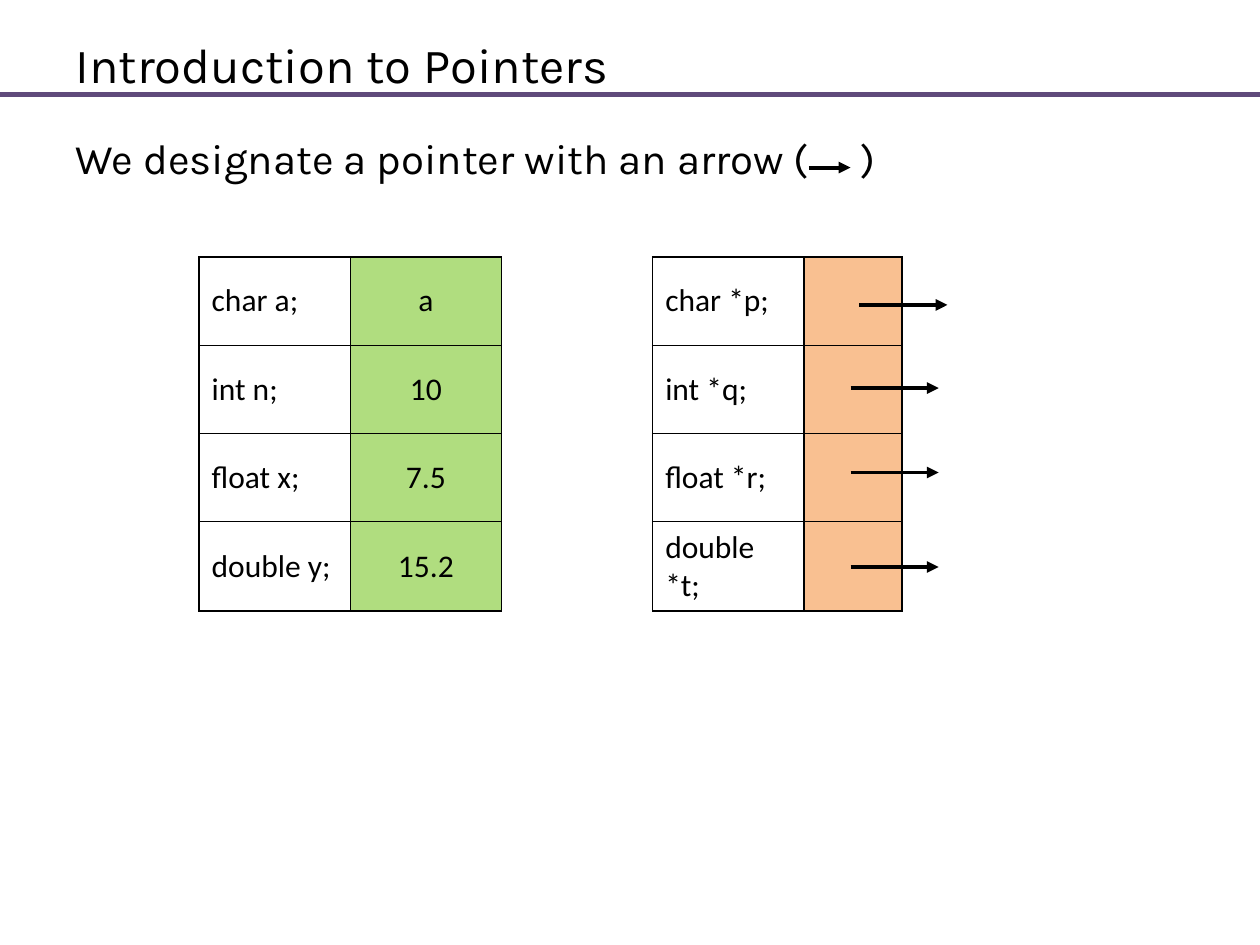
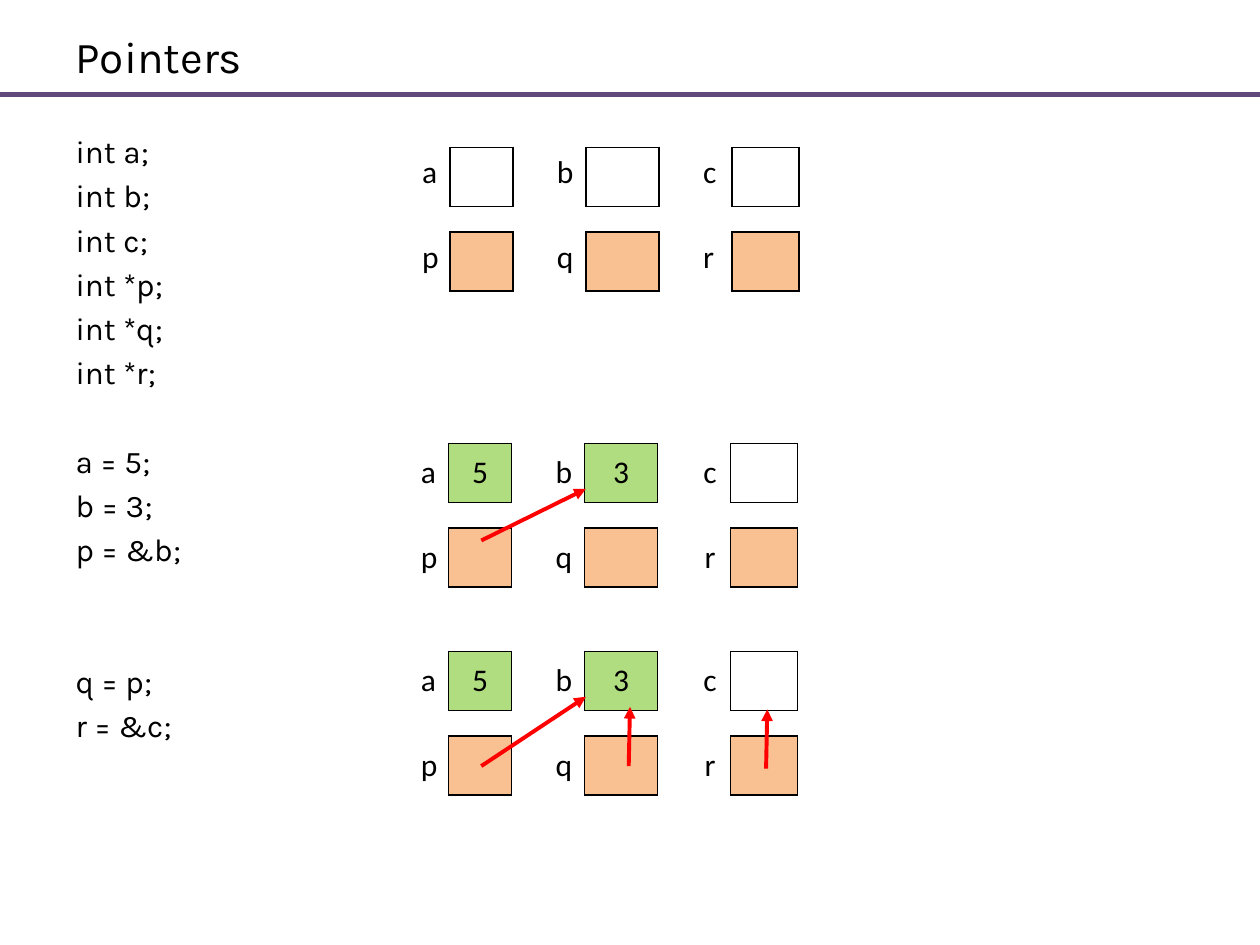
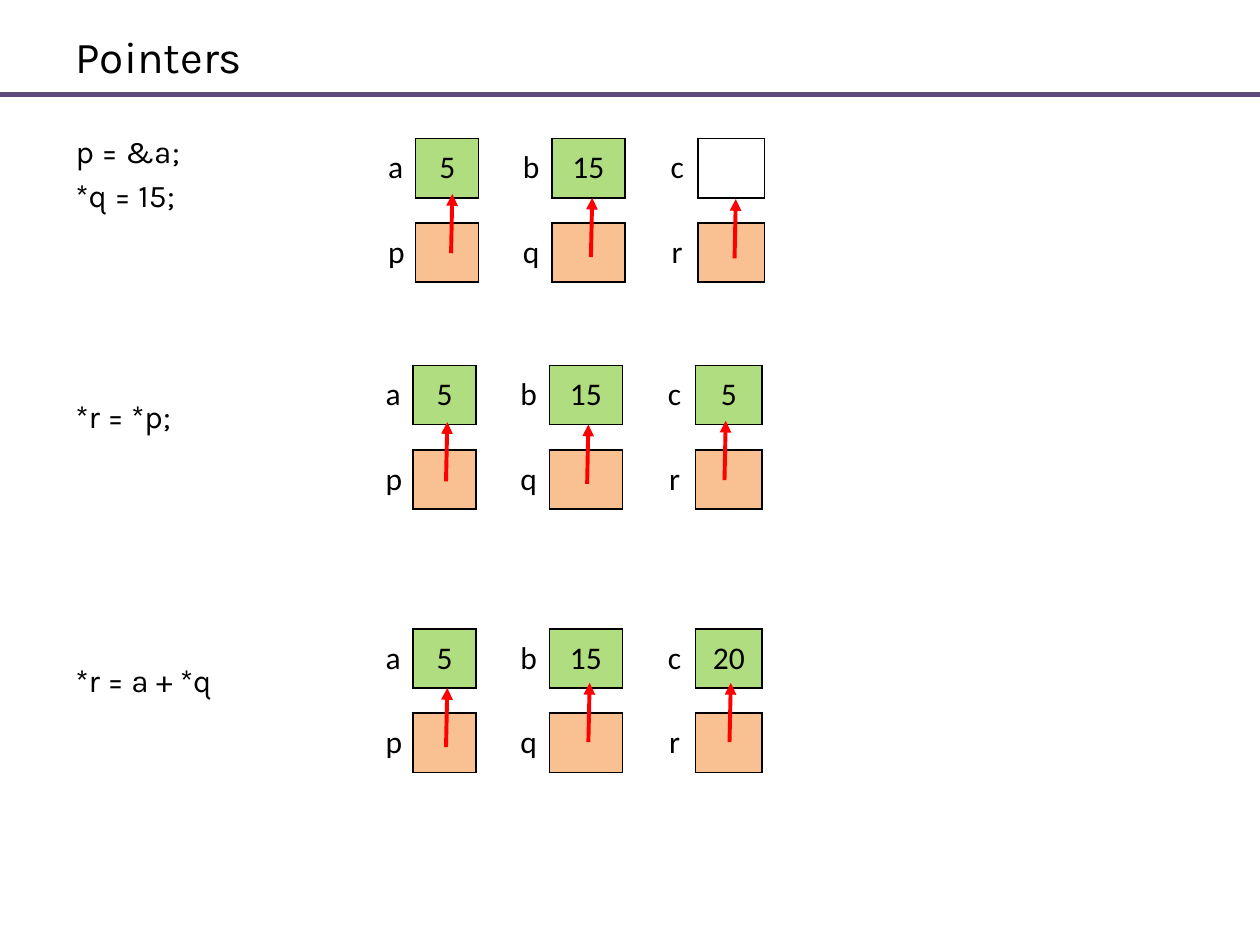
from dataclasses import dataclass
from typing import NamedTuple

from lxml import etree
from pptx import Presentation
from pptx.dml.color import RGBColor
from pptx.enum.shapes import MSO_CONNECTOR
from pptx.enum.text import MSO_ANCHOR, MSO_AUTO_SIZE, PP_ALIGN
from pptx.oxml.ns import qn
from pptx.util import Emu, Inches, Pt

LEFT, MID, RIGHT = PP_ALIGN.LEFT, PP_ALIGN.CENTER, PP_ALIGN.RIGHT
TOP, CORE = MSO_ANCHOR.TOP, MSO_ANCHOR.MIDDLE
FIXED = MSO_AUTO_SIZE.NONE
STRAIGHT = MSO_CONNECTOR.STRAIGHT

UNIT = Inches(0.1)
WIDE, HIGH = 100, 75
BLACK, RED, PURPLE = "000000", "FF0000", "604A7B"
GREEN, PEACH = "B0DD7F", "F9C091"
PLAIN = "{2D5ABB26-0587-4C30-8999-92F81FD0307C}"
SIDES = {"lnL": (0, -1), "lnR": (0, 1), "lnT": (-1, 0), "lnB": (1, 0)}
HEAD = {"name": "Karla", "bold": False}
CODE = {"name": "Karla", "size": Pt(18)}
LEDE = {"name": "Karla", "size": Pt(24)}
LABEL = {"name": "Calibri", "size": Pt(18), "bold": False}
STEP, LEAD = 25.1, 4
COLS = (3.2, 5, 2.5, 3.3, 5.8, 2.5, 3.3, 5.3)
ROWS = (4.7, 2, 4.7)


class Line(NamedTuple):
    """A line of body text, with the number of lines left free above it."""
    text: str
    skip: int = 0


class Arrow(NamedTuple):
    """An arrow by its start and its reach, upright unless told otherwise."""
    x: float
    y: float
    dx: float = 0.1
    dy: float = -4.7


@dataclass(frozen=True)
class Cell:
    """The look of one table cell."""
    text: str = ""
    fill: str = ""
    box: bool = False
    align: int = MID
    anchor: int = CORE


@dataclass(frozen=True)
class Panel:
    """Three variables above three pointers, with the arrows between them."""
    left: float
    top: float
    vals: tuple = ("", "", "")
    hops: tuple = ()
    aligns: tuple = (MID, MID, MID)
    anchor: int = CORE


def grid(count: float) -> Emu:
    """Turn a count of grid units into a length."""
    return Emu(round(count * UNIT))


def paint(color, code: str) -> None:
    """Set a colour from its hex string."""
    color.rgb = RGBColor.from_string(code)


def apply(item, form: dict) -> None:
    """Set every attribute named in a format dict."""
    for key, val in form.items():
        setattr(item, key, val)


def node(root, tag: str, **attrs: str):
    """Append a drawing element to a parent."""
    return etree.SubElement(root, qn(f"a:{tag}"), attrs)


def write(para, text: str, form: dict, spread: float = 0) -> None:
    """Put one black run in a paragraph, its letters spread by some points."""
    run = para.add_run()
    run.text = text
    apply(run.font, form)
    paint(run.font.color, BLACK)
    if spread:
        run._r.get_or_add_rPr().set("spc", str(round(spread * 100)))


def stroke(slide, arrow: Arrow, code: str, width: float = 2.25, head: bool = True) -> None:
    """Draw a straight line, with an arrowhead if wanted."""
    x, y, dx, dy = arrow
    link = slide.shapes.add_connector(
        STRAIGHT, grid(x), grid(y), grid(x + dx), grid(y + dy))
    link.line.width = Pt(width)
    paint(link.line.color, code)
    props = link._element.spPr
    if head:
        node(props.find(qn("a:ln")), "tailEnd", type="triangle")
    node(props, "effectLst")


def place(shape, left: float, top: float, width: float, height: float, anchor) -> None:
    """Move a placeholder and fix how it holds its text."""
    apply(shape, {"left": grid(left), "top": grid(top),
                  "width": grid(width), "height": grid(height)})
    apply(shape.text_frame, {"auto_size": FIXED, "word_wrap": True,
                             "vertical_anchor": anchor})


def start(deck, title: str, top: float, size: float, lines: list, form: dict):
    """Add a slide with its band, title and body text."""
    slide = deck.slides.add_slide(deck.slide_layouts[1])
    stroke(slide, Arrow(0, 7.5, WIDE, 0), PURPLE, 2.5, False)
    name, body = slide.placeholders
    place(name, 5, top, 90, 4.5, CORE)
    para = name.text_frame.paragraphs[0]
    para.alignment = LEFT
    write(para, title, HEAD | {"size": Pt(size)})
    place(body, 5, 10, 90, 61.7, TOP)
    frame = body.text_frame
    for num, line in enumerate(lines):
        para = frame.add_paragraph() if num else frame.paragraphs[0]
        props = para._p.get_or_add_pPr()
        props.set("marL", "0")
        props.set("indent", "0")
        node(props, "buNone")
        if line.skip:
            para.space_before = Pt(LEAD + STEP * line.skip)
        write(para, line.text, form)
    return slide


def edge(props, side: str, shown: bool) -> None:
    """Set one border of a cell."""
    rule = node(props, side, w=str(Pt(1)))
    if shown:
        node(node(rule, "solidFill"), "srgbClr", val=BLACK)
    else:
        node(rule, "noFill")


def table(slide, left: float, top: float, cols: tuple, rows: tuple, cells: dict) -> None:
    """Draw a table whose boxed cells share their borders with neighbours."""
    item = slide.shapes.add_table(
        len(rows), len(cols), grid(left), grid(top),
        grid(sum(cols)), grid(sum(rows))).table
    apply(item, {"first_row": False, "horz_banding": False})
    item._tbl.tblPr.find(qn("a:tableStyleId")).text = PLAIN
    for col, width in zip(item.columns, cols):
        col.width = grid(width)
    for row, height in zip(item.rows, rows):
        row.height = grid(height)
    blank = Cell()
    for r, height in enumerate(rows):
        for c in range(len(cols)):
            look, cell = cells.get((r, c), blank), item.cell(r, c)
            cell.vertical_anchor = look.anchor
            if height < 3:
                apply(cell, {"margin_top": 0, "margin_bottom": 0})
            props = cell._tc.get_or_add_tcPr()
            for side, (dr, dc) in SIDES.items():
                near = cells.get((r + dr, c + dc), blank)
                edge(props, side, look.box or near.box)
            if look.fill:
                cell.fill.solid()
                paint(cell.fill.fore_color, look.fill)
            else:
                cell.fill.background()
            para = cell.text_frame.paragraphs[0]
            para.alignment = look.align
            if look.text:
                write(para, look.text, LABEL)
            else:
                node(para._p, "endParaRPr", sz="800")


def show(slide, panel: Panel) -> None:
    """Draw a memory panel and its arrows."""
    cells = {}
    for num, val in enumerate(panel.vals):
        col = 3 * num
        for row, names in ((0, "abc"), (2, "pqr")):
            cells[row, col] = Cell(names[num], align=panel.aligns[num], anchor=panel.anchor)
        cells[0, col + 1] = Cell(val, GREEN if val else "", True)
        cells[2, col + 1] = Cell(fill=PEACH, box=True)
    table(slide, panel.left, panel.top, COLS, ROWS, cells)
    for hop in panel.hops:
        stroke(slide, hop, RED)


def intro(deck) -> None:
    """Build the slide that presents pointers as arrows."""
    slide = start(deck, "Introduction to Pointers", 2.8, 28,
                  [Line("We designate a pointer with an arrow (")], LEDE)
    para = slide.placeholders[1].text_frame.paragraphs[0]
    write(para, " ", LEDE, 23.5)
    write(para, ")", LEDE)
    stroke(slide, Arrow(64.2, 13.3, 3.3, 0), BLACK)
    facts = (("char a;", "a", "char *p;"), ("int n;", "10", "int *q;"),
             ("float x;", "7.5", "float *r;"), ("double y;", "15.2", "double *t;"))
    cells = {}
    for row, (plain, val, ref) in enumerate(facts):
        cells[row, 0] = Cell(plain, box=True, align=LEFT)
        cells[row, 1] = Cell(val, GREEN, True)
        cells[row, 3] = Cell(ref, box=True, align=LEFT)
        cells[row, 4] = Cell(fill=PEACH, box=True)
    table(slide, 15.8, 20.4, (12, 12, 12, 12, 7.8), (7,) * len(facts), cells)
    for x, y in ((68.2, 24.2), (67.5, 30.8), (67.5, 37.5), (67.5, 45)):
        stroke(slide, Arrow(x, y, 7, 0), BLACK)


def trace(deck, lines: list, panels: tuple) -> None:
    """Build a slide that sets code beside memory panels."""
    slide = start(deck, "Pointers", 2.2, 25.2, lines, CODE)
    for panel in panels:
        show(slide, panel)


def main() -> None:
    """Build and save the deck."""
    deck = Presentation()
    deck.slide_width, deck.slide_height = grid(WIDE), grid(HIGH)
    intro(deck)
    trace(deck, [
        Line("int a;"), Line("int b;"), Line("int c;"),
        Line("int *p;"), Line("int *q;"), Line("int *r;"),
        Line("a = 5;", 1), Line("b = 3;"), Line("p = &b;"),
        Line("q = p;", 2), Line("r = &c;"),
    ], (
        Panel(32.5, 11.7, aligns=(LEFT, RIGHT, LEFT), anchor=TOP),
        Panel(32.4, 35.2, ("5", "3", ""), (Arrow(38.2, 42.9, 8.3, -4.1),)),
        Panel(32.4, 51.7, ("5", "3", ""),
              (Arrow(38.2, 60.8, 8.3, -5.5), Arrow(49.9, 60.8), Arrow(60.8, 61))),
    ))
    trace(deck, [
        Line("p = &a;"), Line("*q = 15;"),
        Line("*r = *p;", 4), Line("*r = a + *q", 5),
    ], (
        Panel(29.8, 11, ("5", "15", ""),
              (Arrow(35.8, 20.1), Arrow(46.9, 20.4), Arrow(58.3, 20.5))),
        Panel(29.6, 29, ("5", "15", "5"),
              (Arrow(35.4, 38.2), Arrow(46.6, 38.4), Arrow(57.5, 38.1))),
        Panel(29.6, 49.9, ("5", "15", "20"),
              (Arrow(35.4, 59.3), Arrow(46.7, 58.9), Arrow(57.9, 58.9))),
    ))
    deck.save("out.pptx")


if __name__ == "__main__":
    main()
